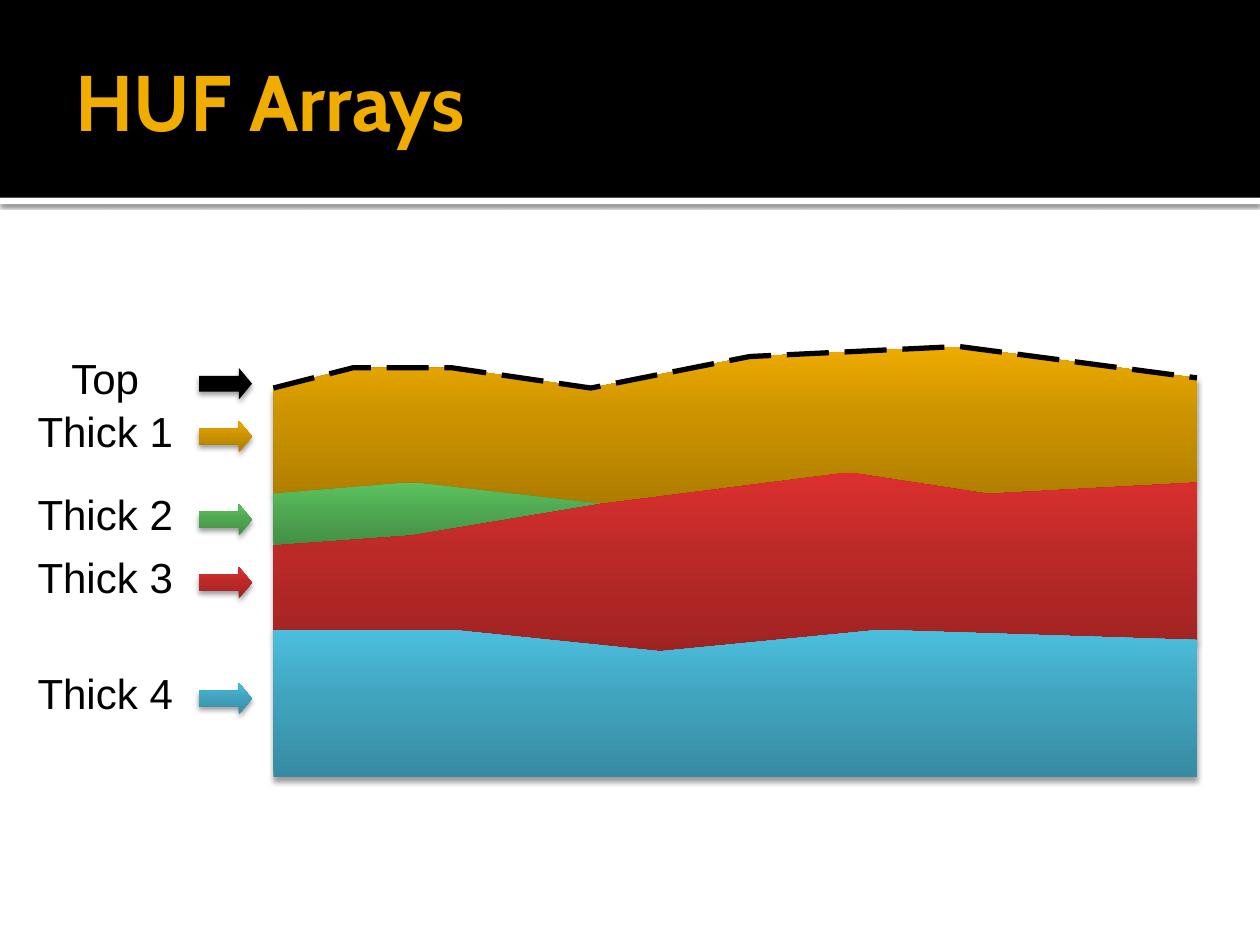
from pptx import Presentation
from pptx import util as u
from pptx.dml.color import RGBColor
from pptx.enum import dml, shapes, text
from pptx.oxml import parse_xml
from pptx.oxml.ns import nsdecls, qn
from copy import deepcopy

BLACK = RGBColor(0x00, 0x00, 0x00)
WHITE = RGBColor(0xFF, 0xFF, 0xFF)
AMBER = RGBColor(0xF0, 0xAD, 0x00)
# Gradients run from the dark bottom to the bright top.
GOLD = [RGBColor(0xAE, 0x7D, 0x00), RGBColor(0xCC, 0x93, 0x00), RGBColor(0xEE, 0xAB, 0x00)]
GREEN = [RGBColor(0x43, 0x8F, 0x45), RGBColor(0x4F, 0xA8, 0x51), RGBColor(0x5C, 0xC3, 0x5F)]
RED = [RGBColor(0xA0, 0x23, 0x22), RGBColor(0xBC, 0x2A, 0x28), RGBColor(0xDC, 0x30, 0x2F)]
BLUE = [RGBColor(0x37, 0x8B, 0xA2), RGBColor(0x41, 0xA4, 0xBF), RGBColor(0x4B, 0xBF, 0xDE)]
STOPS = (0, 0.55, 1)

# Boundaries between the layers, each from left to right.
SURFACE = [(2.17, 3.08), (2.8, 2.92), (3.59, 2.92), (4.69, 3.08),
           (5.95, 2.83), (7.61, 2.75), (9.5, 3)]
LENS_TOP = [(2.17, 3.92), (3.27, 3.83), (4.77, 4)]
LENS_BOTTOM = [(2.17, 4.33), (3.27, 4.25), (4.77, 4)]
RED_CREST = [(6.74, 3.75), (7.84, 3.92), (9.5, 3.83)]
BLUE_TOP = [(2.17, 5), (3.59, 5), (5.24, 5.17), (6.98, 5), (9.5, 5.08)]
BASE = [(2.17, 6.17), (9.5, 6.17)]

LAYERS = [
    (SURFACE, LENS_TOP + RED_CREST, GOLD),
    (LENS_TOP, LENS_BOTTOM[:-1], GREEN),
    (LENS_BOTTOM + RED_CREST, BLUE_TOP, RED),
    (BLUE_TOP, BASE, BLUE),
]
LABELS = [("Top", 2.75, BLACK), ("Thick 1", 3.17, GOLD), ("Thick 2", 3.83, GREEN),
          ("Thick 3", 4.33, RED), ("Thick 4", 5.25, BLUE)]


def paint(shape, colour):
    """Fill with one colour, or with a vertical gradient if given a list."""
    fill = shape.fill
    if isinstance(colour, RGBColor):
        fill.solid()
        fill.fore_color.rgb = colour
    else:
        fill.gradient()
        fill.gradient_angle = 90
        last = shape.element.spPr.findall(".//" + qn("a:gs"))[-1]
        last.addnext(deepcopy(last))
        for stop, position, shade in zip(fill.gradient_stops, STOPS, colour):
            stop.position = position
            stop.color.rgb = shade
    shape.line.fill.background()
    shape.shadow.inherit = False


def add_shadow(shape, opacity=38, blur=3.1, distance=2):
    effects = shape.element.spPr.find(qn("a:effectLst"))
    effects.append(parse_xml(
        f'<a:outerShdw {nsdecls("a")} blurRad="{u.Pt(blur)}" dist="{u.Pt(distance)}" '
        f'dir="5400000" rotWithShape="0"><a:srgbClr val="000000">'
        f'<a:alpha val="{opacity * 1000}"/></a:srgbClr></a:outerShdw>'))


def add_preset(parent, kind, left, top, width, height, colour):
    shape = parent.shapes.add_shape(
        kind, u.Inches(left), u.Inches(top), u.Inches(width), u.Inches(height))
    paint(shape, colour)
    return shape


def add_outline(page, points, close):
    corners = [(u.Inches(x), u.Inches(y)) for x, y in points]
    builder = page.shapes.build_freeform(*corners[0])
    builder.add_line_segments(corners[1:], close=close)
    return builder.convert_to_shape()


def add_layer(page, top, bottom, colour):
    layer = add_outline(page, top + bottom[::-1], close=True)
    paint(layer, colour)
    add_shadow(layer)


def add_surface(page):
    surface = add_outline(page, SURFACE, close=False)
    surface.fill.background()
    surface.line.color.rgb = BLACK
    surface.line.width = u.Pt(3)
    surface.line.dash_style = dml.MSO_LINE.LONG_DASH
    surface.shadow.inherit = False


def write(frame, words, *, font, size, colour, bold=False, align=text.PP_ALIGN.LEFT):
    para = frame.paragraphs[0]
    para.alignment = align
    span = para.add_run()
    span.text = words
    span.font.name = font
    span.font.size = u.Pt(size)
    span.font.bold = bold
    span.font.color.rgb = colour


def add_label(page, words, top, colour):
    """Group a layer's name with an arrow in the layer's colour."""
    group = page.shapes.add_group_shape()
    box = group.shapes.add_textbox(
        u.Inches(0.17), u.Inches(top), u.Inches(1.33), u.Inches(0.5))
    box.text_frame.word_wrap = True
    box.text_frame.auto_size = text.MSO_AUTO_SIZE.SHAPE_TO_FIT_TEXT
    write(box.text_frame, words, font="Arial", size=24, colour=BLACK,
          align=text.PP_ALIGN.CENTER)
    arrow = add_preset(group, shapes.MSO_SHAPE.RIGHT_ARROW,
                       1.58, top + 0.17, 0.42, 0.25, colour)
    arrow.adjustments[1] = 0.417
    add_shadow(arrow)


def add_header(page, words):
    rule = add_preset(page, shapes.MSO_SHAPE.RECTANGLE, 0, 1.57, 10, 0.05, WHITE)
    add_shadow(rule, opacity=60, blur=2.5, distance=0.8)
    add_preset(page, shapes.MSO_SHAPE.RECTANGLE, 0, 0, 10, 1.57, BLACK)

    title = page.shapes.title
    title.left, title.top = u.Inches(0.5), u.Inches(0.17)
    title.width, title.height = u.Inches(8.5), u.Inches(1.25)
    frame = title.text_frame
    frame.vertical_anchor = text.MSO_ANCHOR.MIDDLE
    frame.margin_right = u.Inches(0.05)
    write(frame, words, font="Cabin", size=45, colour=AMBER, bold=True)
    title.element.getparent().append(title.element)  # in front of the band


def main():
    deck = Presentation()
    deck.slide_width, deck.slide_height = u.Inches(10), u.Inches(7.5)
    page = deck.slides.add_slide(deck.slide_layouts[5])
    add_header(page, "HUF Arrays")
    for top, bottom, colour in LAYERS:
        add_layer(page, top, bottom, colour)
    add_surface(page)
    for words, top, colour in LABELS:
        add_label(page, words, top, colour)
    deck.save("out.pptx")


if __name__ == "__main__":
    main()
